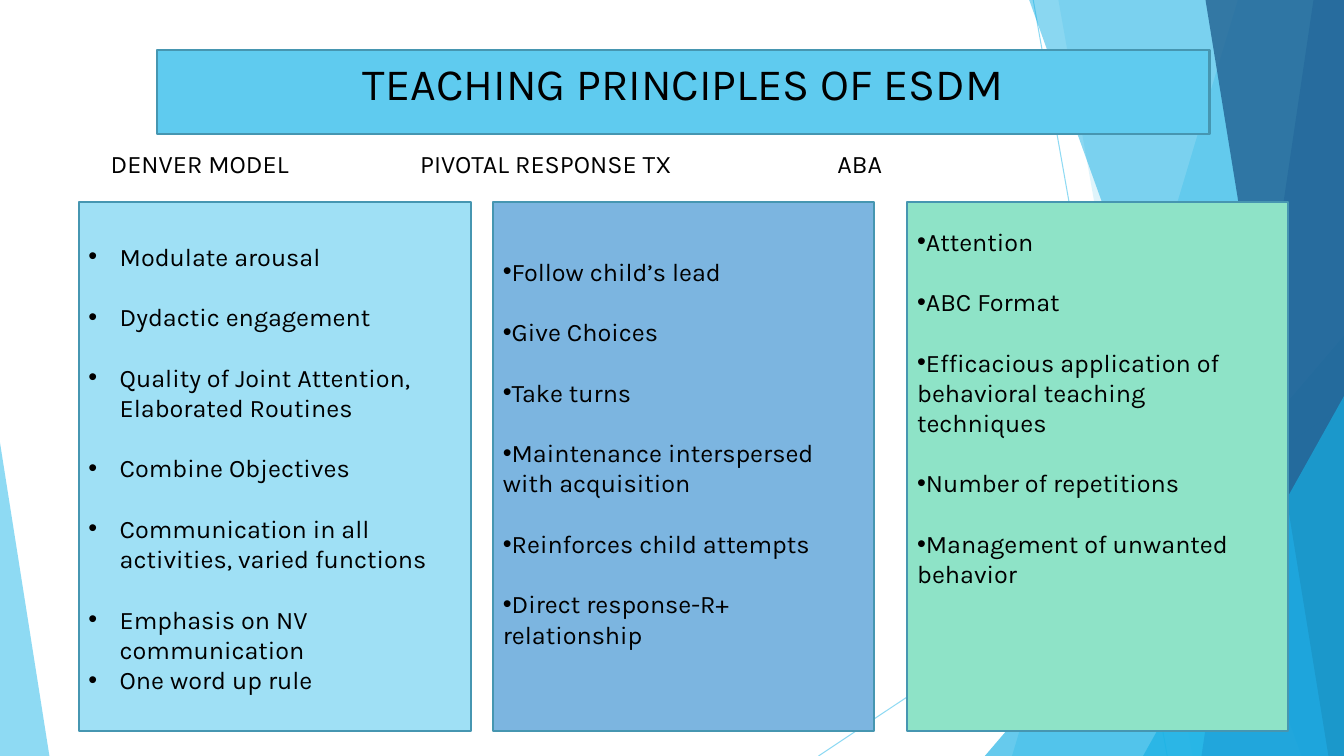
from lxml.etree import SubElement
from pptx import Presentation
from pptx.dml.color import RGBColor
from pptx.enum.shapes import MSO_CONNECTOR as Connector, MSO_SHAPE as Shape
from pptx.enum.text import MSO_ANCHOR as Anchor, PP_ALIGN as Align
from pptx.oxml.ns import qn
from pptx.util import Inches, Pt

WIDTH, HEIGHT = 12192000, 6858000
FONT = "Karla"
SKY, BRIGHT, BLUE, NAVY = "5FCBEF", "17B0E4", "2E83C3", "226292"
OUTLINE = "4696B1"
LINE_GAP = 21.6

RAYS = [(76.88, 0, 86.85, 100), (100, 53.73, 60.9, 100)]
BACK_BANDS = [(92.1, 75.3, SKY, 36), (78.75, 88.73, SKY, 20)]
FRONT_BANDS = [
    (76.58, 96.83, BRIGHT, 50),
    (97.73, 89.4, BLUE, 70),
    (89.7, 98.85, NAVY, 80),
]
HEADINGS = ["DENVER MODEL", "PIVOTAL RESPONSE TX", "ABA"]
HEADING_STOPS = [3.07, 7.21]
DENVER_ITEMS = [
    "Modulate arousal",
    "Dydactic engagement",
    "Quality of Joint Attention, Elaborated Routines",
    "Combine Objectives",
    "Communication in all activities, varied functions",
    "Emphasis on NV communication",
    "One word up rule",
]
PIVOTAL_ITEMS = [
    "Follow child’s lead",
    "Give Choices",
    "Take turns",
    "Maintenance interspersed with acquisition",
    "Reinforces child attempts",
    "Direct response-R+ relationship",
]
ABA_ITEMS = [
    "Attention",
    "ABC Format",
    "Efficacious application of behavioral teaching techniques",
    "Number of repetitions",
    "Management of unwanted behavior",
]


def across(percent):
    return round(WIDTH * percent / 100)


def down(percent):
    return round(HEIGHT * percent / 100)


def area(left, top, width, height):
    return across(left), down(top), across(width), down(height)


def paint(paint_format, color, opacity=100):
    paint_format.solid()
    paint_format.fore_color.rgb = RGBColor.from_string(color)
    if opacity < 100:
        for color_element in paint_format._xPr.iter(qn("a:srgbClr")):
            SubElement(color_element, qn("a:alpha"), val=str(opacity * 1000))


def style_text(paragraph, size=18, align=Align.LEFT):
    paragraph.alignment = align
    paragraph.font.name = FONT
    paragraph.font.size = Pt(size)
    paragraph.font.color.rgb = RGBColor.from_string("000000")


def add_ray(slide, left, top, right, bottom):
    ray = slide.shapes.add_connector(
        Connector.STRAIGHT, across(left), down(top), across(right), down(bottom)
    )
    paint(ray.line.fill, SKY, 70)
    ray.line.width = Pt(0.75)
    SubElement(ray._element.spPr, qn("a:effectLst"))


def finish_decoration(shape, color, opacity):
    shape.shadow.inherit = False
    paint(shape.fill, color, opacity)
    shape.line.fill.background()


def add_band(slide, top_left, bottom_left, color, opacity):
    builder = slide.shapes.build_freeform(across(top_left), 0)
    builder.add_line_segments(
        [(WIDTH, 0), (WIDTH, HEIGHT), (across(bottom_left), HEIGHT)], close=True
    )
    finish_decoration(builder.convert_to_shape(), color, opacity)


def add_corner(slide, left, top, width, apex, color, opacity):
    corner = slide.shapes.add_shape(
        Shape.ISOSCELES_TRIANGLE, *area(left, top, width, 100 - top)
    )
    corner.adjustments[0] = apex
    finish_decoration(corner, color, opacity)


def add_panel(slide, box, color, inset):
    panel = slide.shapes.add_shape(Shape.RECTANGLE, *area(*box))
    panel.shadow.inherit = False
    paint(panel.fill, color)
    paint(panel.line.fill, OUTLINE)
    panel.line.width = Pt(1.5)
    frame = panel.text_frame
    frame.word_wrap = True
    frame.vertical_anchor = Anchor.TOP
    frame.margin_top = down(inset)
    return frame


def add_bullet(paragraph, indent):
    properties = paragraph._p.get_or_add_pPr()
    properties.set("marL", str(Inches(indent)))
    properties.set("indent", str(-Inches(indent)))
    SubElement(properties, qn("a:buFont"), typeface="Arial")
    SubElement(properties, qn("a:buChar"), char="•")


def add_column(slide, left, width, color, inset, items, indent=0, tight_item=None):
    frame = add_panel(slide, (left, 26.67, width, 70), color, inset)
    for index, item in enumerate(items):
        paragraph = frame.paragraphs[0] if index == 0 else frame.add_paragraph()
        paragraph.text = item
        add_bullet(paragraph, indent)
        paragraph.space_after = Pt(0 if item == tight_item else LINE_GAP)
        style_text(paragraph)


def add_title(slide, text):
    frame = add_panel(slide, (11.7, 6.67, 78.3, 11.11), SKY, 0.67)
    frame.paragraphs[0].text = text
    style_text(frame.paragraphs[0], 32, Align.CENTER)


def add_headings(slide):
    frame = slide.shapes.add_textbox(*area(7.5, 18.93, 85.8, 5.33)).text_frame
    frame.word_wrap = True
    paragraph = frame.paragraphs[0]
    paragraph.text = "\t".join(HEADINGS)
    stops = SubElement(paragraph._p.get_or_add_pPr(), qn("a:tabLst"))
    for stop in HEADING_STOPS:
        SubElement(stops, qn("a:tab"), pos=str(Inches(stop)), algn="l")
    style_text(paragraph)


def add_backdrop(slide):
    for ray in RAYS:
        add_ray(slide, *ray)
    for band in BACK_BANDS:
        add_band(slide, *band)
    add_corner(slide, 73.28, 44.4, 26.72, 1, BRIGHT, 66)
    for band in FRONT_BANDS:
        add_band(slide, *band)
    add_corner(slide, 85.05, 52.4, 14.95, 1, BRIGHT, 66)
    add_corner(slide, 0, 58.53, 3.68, 0, SKY, 70)


def main():
    presentation = Presentation()
    presentation.slide_width, presentation.slide_height = WIDTH, HEIGHT
    slide = presentation.slides.add_slide(presentation.slide_layouts[6])
    add_backdrop(slide)
    add_column(slide, 5.85, 29.18, "9FE0F5", 5.2, DENVER_ITEMS, 0.31, DENVER_ITEMS[-2])
    add_column(slide, 36.68, 28.35, "7CB5E0", 7.2, PIVOTAL_ITEMS)
    add_column(slide, 67.5, 28.35, "8EE3C7", 3.2, ABA_ITEMS)
    add_title(slide, "TEACHING PRINCIPLES OF ESDM")
    add_headings(slide)
    presentation.save("out.pptx")


if __name__ == "__main__":
    main()
